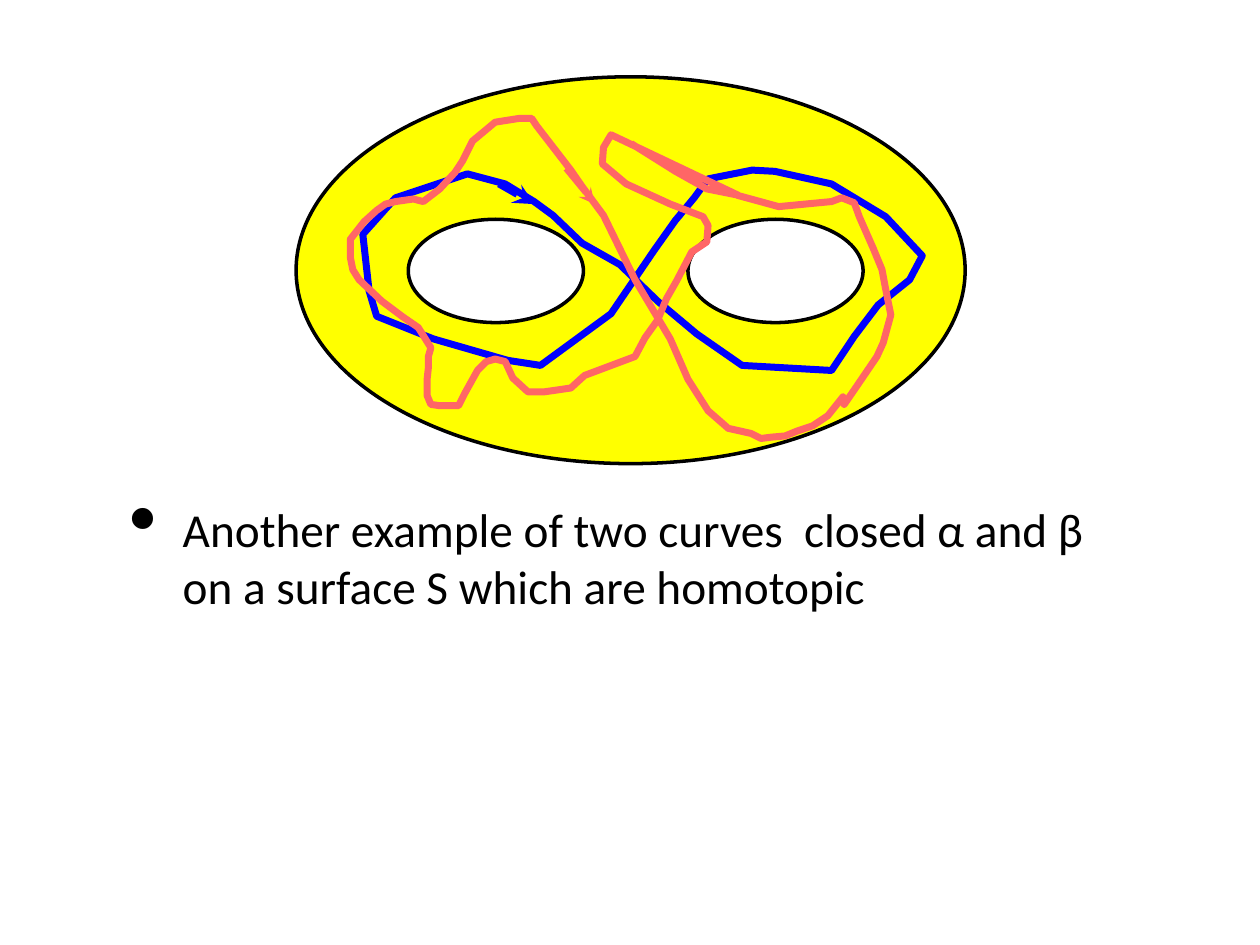
from lxml import etree
from pptx import Presentation
from pptx.dml.color import RGBColor
from pptx.enum.shapes import MSO_CONNECTOR, MSO_SHAPE
from pptx.enum.text import MSO_ANCHOR, PP_ALIGN
from pptx.oxml.ns import qn
from pptx.util import Pt

PX = 9144
OVAL = MSO_SHAPE.OVAL
STRAIGHT = MSO_CONNECTOR.STRAIGHT
MIDDLE = MSO_ANCHOR.MIDDLE
LEFT = PP_ALIGN.LEFT
COLORS = {"surface": "FFFF00", "hole": "FFFFFF", "ink": "000000",
          "alpha": "0000FF", "beta": "FF6666"}


def set_line(part, color, width):
    part.line.color.rgb = RGBColor.from_string(COLORS[color])
    part.line.width = Pt(width)


prs = Presentation()
prs.slide_width = 1000 * PX
prs.slide_height = 750 * PX
slide = prs.slides.add_slide(prs.slide_layouts[6])
shapes = slide.shapes

statement = shapes.add_textbox(71 * PX, 351 * PX, 812 * PX, 182 * PX)
frame = statement.text_frame
frame.word_wrap = True
frame.vertical_anchor = MIDDLE
frame.margin_left = frame.margin_right = 4 * PX
frame.margin_top = frame.margin_bottom = 4 * PX
paragraph = frame.paragraphs[0]
paragraph.alignment = LEFT
paragraph.space_before = Pt(27)
bullet = paragraph._p.get_or_add_pPr()
bullet.set("marL", str(70 * PX))
bullet.set("indent", str(-42 * PX))
etree.SubElement(bullet, qn("a:buSzPct"), val="171000")
etree.SubElement(bullet, qn("a:buChar"), char="•")
run = paragraph.add_run()
run.text = "Another example of two curves  closed α and β on a surface S which are homotopic"
run.font.name = "Calibri"
run.font.size = Pt(27)
run.font.color.rgb = RGBColor.from_string(COLORS["ink"])

for left, top, width, height, fill in [
    (235, 61, 531, 307, "surface"),
    (324, 174, 139, 82, "hole"),
    (546, 174, 139, 82, "hole"),
]:
    ellipse = shapes.add_shape(OVAL, left * PX, top * PX, width * PX, height * PX)
    ellipse.shadow.inherit = False
    ellipse.fill.solid()
    ellipse.fill.fore_color.rgb = RGBColor.from_string(COLORS[fill])
    set_line(ellipse, "ink", 2)

alpha_points = [
    (732, 203), (703, 172), (660, 146), (615, 136), (597, 135), (582, 138),
    (562, 142), (551, 157), (536, 175), (519, 199), (485, 249), (429, 290),
    (403, 286), (344, 269), (299, 251), (293, 231), (288, 186), (314, 157),
    (371, 138), (401, 146), (424, 160), (439, 171), (462, 193), (492, 210),
    (522, 239), (553, 265), (589, 290), (660, 294), (678, 267), (697, 242),
    (722, 222),
]
beta_points = [
    (501, 114), (536, 136), (561, 150), (586, 155), (485, 107), (479, 117),
    (478, 130), (497, 146), (532, 162), (558, 172), (562, 179), (561, 192),
    (549, 200), (537, 223), (529, 237), (522, 254), (512, 268), (504, 283),
    (464, 298), (453, 308), (432, 311), (419, 311), (407, 300), (401, 287),
    (393, 285), (386, 287), (379, 294), (369, 312), (364, 322), (349, 322),
    (342, 321), (339, 314), (339, 301), (340, 292), (340, 283), (342, 276),
    (337, 268), (332, 260), (319, 251), (303, 239), (285, 222), (280, 214),
    (278, 204), (278, 190), (289, 176), (299, 167), (306, 162), (314, 160),
    (328, 158), (336, 160), (349, 150), (361, 137), (367, 128), (375, 112),
    (393, 97), (412, 94), (422, 94), (426, 100), (453, 135), (462, 148),
    (479, 171), (504, 222), (532, 269), (539, 285), (546, 301), (562, 326),
    (578, 340), (596, 344), (604, 348), (612, 347), (623, 346), (633, 342),
    (645, 338), (657, 330), (669, 315), (670, 321), (679, 308), (696, 283),
    (701, 272), (707, 250), (703, 230), (700, 214), (693, 197), (682, 172),
    (678, 161), (668, 157), (660, 160), (618, 164), (585, 155),
]
for color, points, closed in [("alpha", alpha_points, True), ("beta", beta_points, False)]:
    builder = shapes.build_freeform(*points[0], scale=PX)
    builder.add_line_segments(points[1:], close=closed)
    curve = builder.convert_to_shape()
    curve.shadow.inherit = False
    curve.fill.background()
    set_line(curve, color, 4)

for color, tip_x, tip_y, tail_x, tail_y, width in [
    ("beta", 472, 162, 449, 134, 3),
    ("alpha", 424, 162, 396, 146, 4),
]:
    arrow = shapes.add_connector(STRAIGHT, tip_x * PX, tip_y * PX, tail_x * PX, tail_y * PX)
    set_line(arrow, color, width)
    etree.SubElement(arrow.line._get_or_add_ln(), qn("a:headEnd"), type="stealth")
    etree.SubElement(arrow._element.spPr, qn("a:effectLst"))

prs.save("out.pptx")
